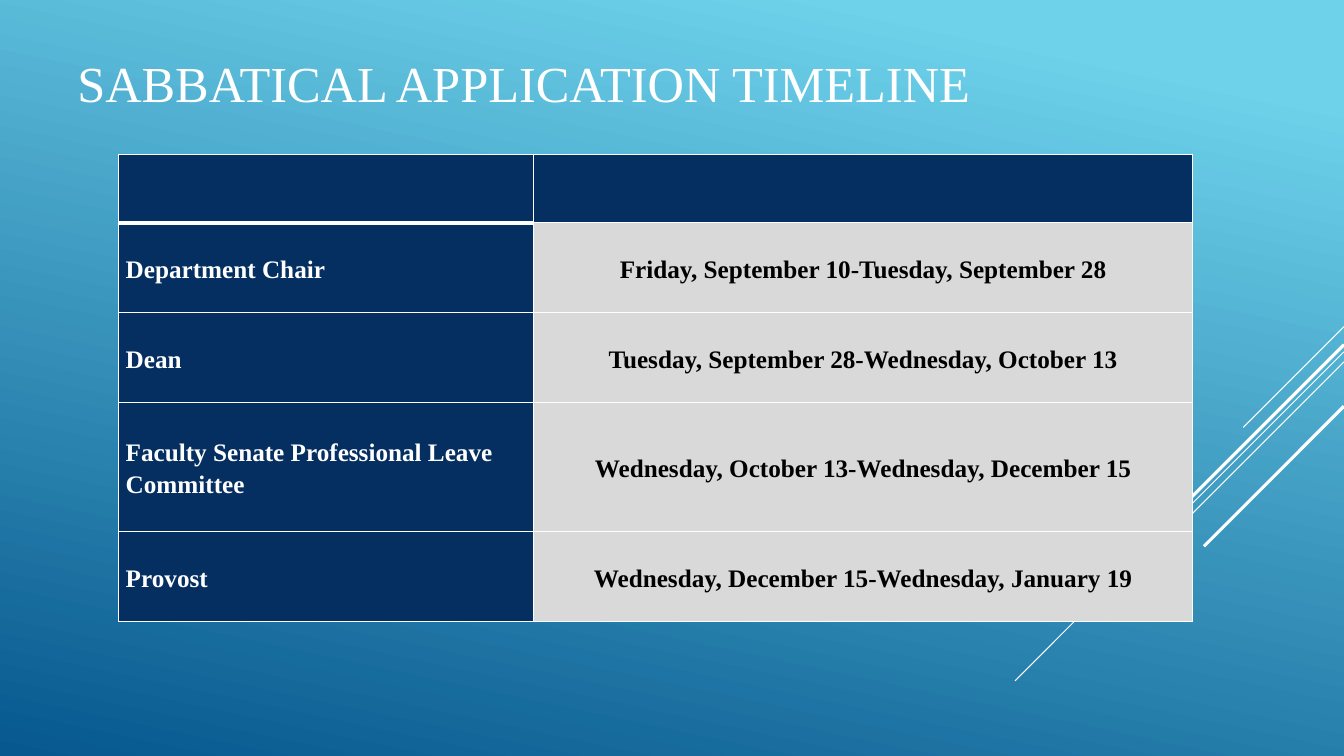
from lxml import etree
from pptx import Presentation
from pptx.dml.color import RGBColor
from pptx.enum import shapes, text
from pptx.oxml import ns
from pptx.util import Pt

TITLE = "SABBATICAL APPLICATION TIMELINE"
TIMELINE = [
    ("", ""),
    ("Department Chair", "Friday, September 10-Tuesday, September 28"),
    ("Dean", "Tuesday, September 28-Wednesday, October 13"),
    ("Faculty Senate Professional Leave Committee",
     "Wednesday, October 13-Wednesday, December 15"),
    ("Provost", "Wednesday, December 15-Wednesday, January 19"),
]
FONT = "Times New Roman"
WHITE, BLACK, NAVY, GRAY = "FFFFFF", "000000", "052F61", "D9D9D9"
GRADIENT = [(0.1, "6ED2EB"), (1, "06588E")]
WIDTH, HEIGHT = 960, 540
COLUMN_WIDTHS = [296.5, 470.5]
ROW_HEIGHTS = [49, 64.2, 64.2, 92.4, 64.2]
# Diagonals from the right edge: start height, run to the left, line width
DIAGONALS = [(233.3, 72, 0.75), (251.3, 235, 0.75), (258.5, 149, 0.75),
             (246.2, 137.5, 2.25), (290.2, 100, 2.25)]


def color(value):
    return RGBColor.from_string(value)


def format_runs(paragraph, size, value, bold=False):
    for run in paragraph.runs:
        run.font.name = FONT
        run.font.size = Pt(size)
        run.font.bold = bold
        run.font.color.rgb = color(value)


def add_borders(cell, bottom_width):
    properties = cell._tc.get_or_add_tcPr()
    for side, width in (("L", 1), ("R", 1), ("T", 1), ("B", bottom_width)):
        line = etree.SubElement(properties, ns.qn(f"a:ln{side}"), w=str(Pt(width)))
        fill = etree.SubElement(line, ns.qn("a:solidFill"))
        etree.SubElement(fill, ns.qn("a:srgbClr"), val=WHITE)


presentation = Presentation()
presentation.slide_width, presentation.slide_height = Pt(WIDTH), Pt(HEIGHT)
slide = presentation.slides.add_slide(presentation.slide_layouts[5])

# Background: python-pptx counts the angle counterclockwise
background = slide.background.fill
background.gradient()
background.gradient_angle = 360 - 102
for stop, (position, value) in zip(background.gradient_stops, GRADIENT):
    stop.position = position
    stop.color.rgb = color(value)

# Diagonal lines, all at 45 degrees
for top, run_length, width in DIAGONALS:
    line = slide.shapes.add_connector(
        shapes.MSO_CONNECTOR.STRAIGHT, Pt(WIDTH), Pt(top),
        Pt(WIDTH - run_length), Pt(top + run_length))
    line.line.color.rgb = color(WHITE)
    line.line.width = Pt(width)
    etree.SubElement(line._element.spPr, ns.qn("a:effectLst"))

# Title
title = slide.shapes.title
title.left, title.top, title.width, title.height = Pt(48), Pt(28), Pt(792), Pt(62)
title.text_frame.text = TITLE
title.text_frame.auto_size = text.MSO_AUTO_SIZE.NONE
title.text_frame.vertical_anchor = text.MSO_ANCHOR.MIDDLE
title.text_frame.paragraphs[0].alignment = text.PP_ALIGN.LEFT
format_runs(title.text_frame.paragraphs[0], 36, WHITE)

# Timeline table
table = slide.shapes.add_table(
    len(TIMELINE), len(COLUMN_WIDTHS), Pt(84.8), Pt(110.2),
    Pt(sum(COLUMN_WIDTHS)), Pt(sum(ROW_HEIGHTS))).table
for column, width in zip(table.columns, COLUMN_WIDTHS):
    column.width = Pt(width)
for row, height in zip(table.rows, ROW_HEIGHTS):
    row.height = Pt(height)

for row_index, entries in enumerate(TIMELINE):
    for column_index, entry in enumerate(entries):
        is_header = row_index == 0
        is_date = column_index == 1
        cell = table.cell(row_index, column_index)
        add_borders(cell, 3 if is_header and not is_date else 1)
        cell.fill.solid()
        cell.fill.fore_color.rgb = color(GRAY if is_date and not is_header else NAVY)
        cell.margin_left = cell.margin_right = Pt(5)
        cell.margin_top = cell.margin_bottom = Pt(0)
        cell.vertical_anchor = text.MSO_ANCHOR.MIDDLE
        if entry:
            cell.text_frame.text = entry
            paragraph = cell.text_frame.paragraphs[0]
            paragraph.line_spacing = 1.15
            paragraph.alignment = text.PP_ALIGN.CENTER if is_date else text.PP_ALIGN.LEFT
            format_runs(paragraph, 18, BLACK if is_date else WHITE, bold=True)

presentation.save("out.pptx")
